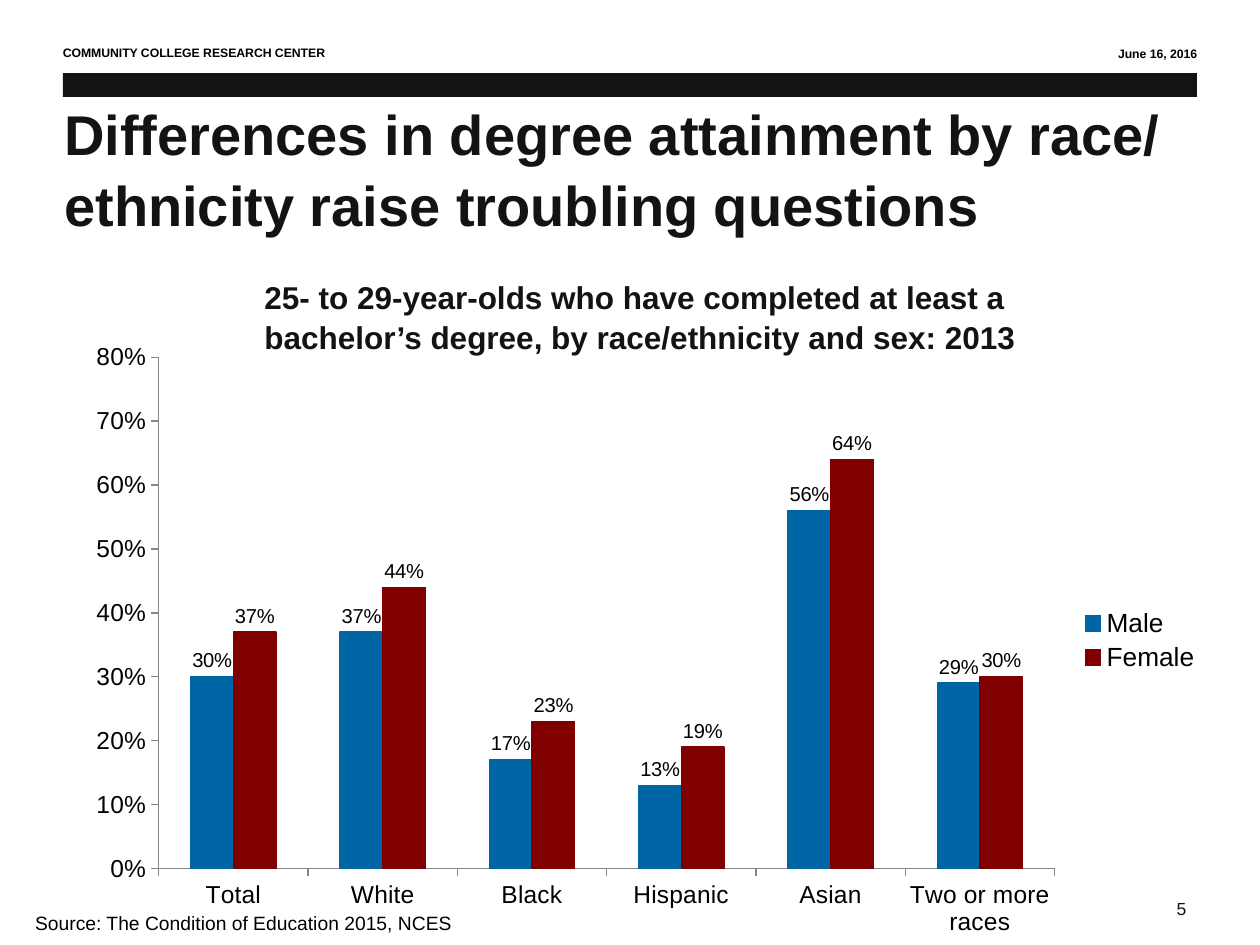
from lxml import etree
from pptx import Presentation
from pptx import util as u
from pptx.chart.data import CategoryChartData
from pptx.dml.color import RGBColor
from pptx.enum import chart as ch, shapes, text
from pptx.oxml import parse_xml
from pptx.oxml.ns import nsdecls

PX = 9144  # 100 px to the inch
FONT = "Arial"
INK = RGBColor(0x14, 0x13, 0x13)
BLACK = RGBColor(0, 0, 0)
GREY = RGBColor(0x86, 0x86, 0x86)
BLUE = RGBColor(0x00, 0x65, 0xA4)
MAROON = RGBColor(0x80, 0, 0)


def px(*lengths):
    return [n * PX for n in lengths]


def write(sp, words, size, color, bold=False, before=0, align=text.PP_ALIGN.LEFT):
    """Fill a shape with one formatted paragraph."""
    tf = sp.text_frame
    tf.word_wrap = True
    tf.text = words
    p = tf.paragraphs[0]
    p.alignment = align
    p.space_before = u.Pt(before)
    f = p.runs[0].font
    f.name, f.size, f.bold = FONT, u.Pt(size), bold
    f.color.rgb = color
    return tf


prs = Presentation()
prs.slide_width, prs.slide_height = px(1000, 750)
s = prs.slides.add_slide(prs.slide_layouts[5])

# Header band
band = s.shapes.add_shape(shapes.MSO_SHAPE.RECTANGLE, *px(50, 58, 900, 19))
band.shadow.inherit = False
band.fill.solid()
band.fill.fore_color.rgb = INK
band.line.fill.background()

# Small texts: header, date, source and page number
RIGHT, LEFT = text.PP_ALIGN.RIGHT, text.PP_ALIGN.LEFT
for box, words, size, color, bold, before, align in (
    ((40, 31, 356, 22), "COMMUNITY COLLEGE RESEARCH CENTER", 7, BLACK, True, 2.3, LEFT),
    ((642, 32, 318, 22), "June 16, 2016", 7, BLACK, True, 2.3, RIGHT),
    ((18, 718, 359, 29), "Source: The Condition of Education 2015, NCES", 11, BLACK, False, 0, LEFT),
    ((924, 708, 46, 27), "5", 10, INK, False, 5, LEFT),
):
    write(s.shapes.add_textbox(*px(*box)), words, size, color, bold, before, align)

# Chart
data = CategoryChartData(number_format="0%")
data.categories = ["Total", "White", "Black", "Hispanic", "Asian", "Two or more races"]
data.add_series("Male", [0.3, 0.37, 0.17, 0.13, 0.56, 0.29])
data.add_series("Female", [0.37, 0.44, 0.23, 0.19, 0.64, 0.3])
chart = s.shapes.add_chart(
    ch.XL_CHART_TYPE.COLUMN_CLUSTERED, *px(63, 264, 900, 489), data).chart
chart.has_title = False
chart.font.name, chart.font.size = FONT, u.Pt(18)
chart.font.color.rgb = BLACK

plot = chart.plots[0]
plot.gap_width, plot.overlap = 150, 0
plot.vary_by_categories = False
for series, color in zip(plot.series, (BLUE, MAROON)):
    series.format.fill.solid()
    series.format.fill.fore_color.rgb = color
    series.format.line.color.rgb = color
    series.format.line.width = u.Pt(0.75)
    labels = series.data_labels
    labels.show_value = True
    labels.number_format, labels.number_format_is_linked = "0%", False
    labels.position = ch.XL_LABEL_POSITION.OUTSIDE_END
    labels.font.name, labels.font.size = FONT, u.Pt(11.5)
    labels.font.color.rgb = BLACK

for axis in (chart.category_axis, chart.value_axis):
    axis.has_major_gridlines = False
    axis.major_tick_mark = ch.XL_TICK_MARK.OUTSIDE
    axis.minor_tick_mark = ch.XL_TICK_MARK.NONE
    axis.tick_labels.font.size = u.Pt(14)
    axis.format.line.color.rgb = GREY
    axis.format.line.width = u.Pt(0.75)
values = chart.value_axis
values.minimum_scale, values.maximum_scale, values.major_unit = 0, 0.8, 0.1
values.tick_labels.number_format = "0%"
values.tick_labels.number_format_is_linked = False

chart.has_legend = True
chart.legend.position = ch.XL_LEGEND_POSITION.RIGHT
chart.legend.include_in_layout = False
chart.legend.font.size = u.Pt(15)

# Fixed inner plot area, as fractions of the chart
plot_area = chart.plots[0]._element.getparent()
for old in plot_area.findall("{*}layout"):
    plot_area.remove(old)
layout = parse_xml(f"<c:layout {nsdecls('c')}><c:manualLayout/></c:layout>")
for tag, val in (("layoutTarget", "inner"), ("xMode", "edge"), ("yMode", "edge"),
                 ("x", "0.07"), ("y", "0.04"), ("w", "0.79"), ("h", "0.83")):
    etree.SubElement(layout[0], f"{{{layout.nsmap['c']}}}{tag}", val=val)
plot_area.insert(0, layout)

# Slide title and chart heading
title = s.shapes.title
title.left, title.top, title.width, title.height = px(41, 70, 900, 125)
heading = s.shapes.add_textbox(*px(200, 188, 625, 125))
for sp, words, size in (
    (title, "Differences in degree attainment by race/ ethnicity raise troubling questions", 32),
    (heading, "25- to 29-year-olds who have completed at least a bachelor’s degree, "
              "by race/ethnicity and sex: 2013", 18),
):
    tf = write(sp, words, size, INK, True)
    tf.auto_size = text.MSO_AUTO_SIZE.NONE
    tf.vertical_anchor = text.MSO_ANCHOR.MIDDLE
    tf.paragraphs[0].line_spacing = 1.05

prs.save("out.pptx")
